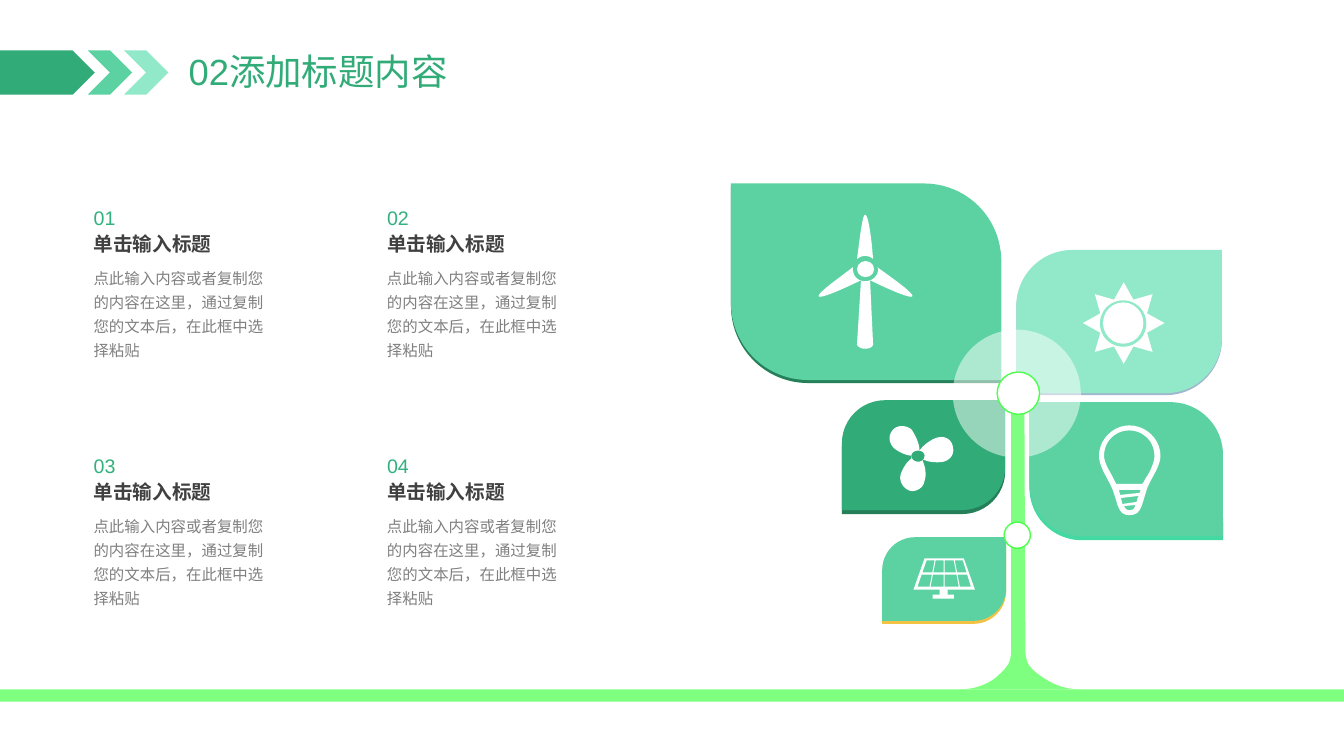
from dataclasses import dataclass
from itertools import product
from typing import Optional

from lxml.etree import SubElement
from pptx import Presentation
from pptx.dml.color import RGBColor
from pptx.enum.shapes import MSO_SHAPE as Preset
from pptx.enum.text import MSO_ANCHOR, MSO_AUTO_SIZE, PP_ALIGN
from pptx.oxml.ns import qn
from pptx.util import Emu, Inches, Pt

# The slide is a grid of one-inch cells: 13.33 columns by 7.5 rows.
CELL = Inches(1)
COLUMNS, ROWS = 13.33, 7.5
FONT = "Arial"
COLORS = {
    "paper": "FEFFFE", "deep": "31AB78", "mid": "5CD2A3", "pale": "91E9C9",
    "number": "31B17E", "heading": "404040", "body": "808080",
    "forest": "25805A", "mint": "42D9A2", "steel": "9FB8CD", "amber": "F2C245",
    "trunk": "7FFF7F", "ring": "4CFF4C",
}
HEADING = "单击输入标题"
BODY = "点此输入内容或者复制您的内容在这里，通过复制您的文本后，在此框中选择粘贴"


@dataclass(frozen=True)
class Box:
    left: float
    top: float
    width: float
    height: float

    def emu(self) -> list[Emu]:
        return [Emu(round(n * CELL)) for n in (self.left, self.top, self.width, self.height)]


@dataclass(frozen=True)
class Leaf:
    box: Box
    color: str
    edge: str
    drop: float
    rounded: tuple[float, float]


@dataclass(frozen=True)
class CardLine:
    text: str
    drop: float
    width: float
    height: float
    size: int
    color: str
    spacing: float = 1.2
    bold: bool = False


# Rounded corners: top left with bottom right, or top right with bottom left.
FALLING, RISING = (0.392, 0), (0, 0.392)
UPPER_LEAVES = [
    Leaf(Box(8.35, 3.97, 1.62, 1.09), "deep", "forest", 0.04, FALLING),
    Leaf(Box(10.21, 3.99, 1.92, 1.33), "mid", "mint", 0.04, RISING),
    Leaf(Box(10.08, 2.48, 2.04, 1.42), "pale", "steel", 0.02, FALLING),
    Leaf(Box(7.25, 1.82, 2.68, 1.95), "mid", "forest", 0.03, RISING),
]
LOW_LEAF = Leaf(Box(8.75, 5.33, 1.23, 0.83), "mid", "amber", 0.03, FALLING)

# An outline step is a line's end (2 numbers) or a cubic curve (6 numbers).
Contour = list[tuple[float, ...]]
TRUNK: list[Contour] = [[
    (10.16, 3.9), (10.17, 6.45), (10.17, 6.5, 10.18, 6.55, 10.2, 6.59),
    (10.21, 6.6, 10.22, 6.62, 10.23, 6.63), (10.27, 6.67, 10.32, 6.71, 10.39, 6.75),
    (10.49, 6.81, 10.6, 6.84, 10.72, 6.84), (9.51, 6.84),
    (9.65, 6.84, 9.78, 6.8, 9.88, 6.72), (9.91, 6.69, 9.95, 6.66, 9.97, 6.63),
    (9.98, 6.62, 9.99, 6.6, 10, 6.59), (10.02, 6.55, 10.03, 6.5, 10.03, 6.45), (10.03, 3.9),
]]
TOP_BLADE: list[Contour] = [[
    (8.66, 2.57), (8.65, 2.44, 8.62, 2.13, 8.58, 2.13), (8.55, 2.13, 8.52, 2.44, 8.5, 2.57),
    (8.53, 2.55, 8.55, 2.54, 8.58, 2.54), (8.61, 2.54, 8.64, 2.55, 8.66, 2.57),
]]
TURBINE: list[Contour] = [[
    (8.7, 2.65), (8.71, 2.66, 8.71, 2.66, 8.71, 2.67), (8.71, 2.74, 8.65, 2.79, 8.58, 2.79),
    (8.51, 2.79, 8.46, 2.74, 8.46, 2.67), (8.46, 2.66, 8.46, 2.66, 8.46, 2.65),
    (8.36, 2.73, 8.1, 2.91, 8.12, 2.94), (8.14, 2.97, 8.42, 2.84, 8.54, 2.78), (8.5, 3.42),
    (8.5, 3.42, 8.52, 3.46, 8.58, 3.46), (8.65, 3.46, 8.66, 3.42, 8.66, 3.42), (8.63, 2.78),
    (8.75, 2.84, 9.03, 2.97, 9.05, 2.94), (9.07, 2.91, 8.81, 2.73, 8.7, 2.65),
]]
FAN: list[Contour] = [
    [(9.45, 4.43), (9.44, 4.36, 9.37, 4.32, 9.3, 4.34), (9.25, 4.35, 9.16, 4.41, 9.12, 4.47),
     (9.12, 4.46), (9.12, 4.4, 9.07, 4.3, 9.04, 4.26), (8.99, 4.22, 8.91, 4.21, 8.86, 4.26),
     (8.81, 4.31, 8.81, 4.38, 8.86, 4.44), (8.89, 4.47, 8.98, 4.52, 9.04, 4.52),
     (9.04, 4.53, 9.04, 4.54, 9.04, 4.55), (8.99, 4.58, 8.94, 4.67, 8.93, 4.72),
     (8.92, 4.78, 8.96, 4.85, 9.03, 4.87), (9.09, 4.88, 9.16, 4.84, 9.17, 4.77),
     (9.19, 4.72, 9.18, 4.63, 9.15, 4.57), (9.15, 4.57, 9.16, 4.56, 9.16, 4.56),
     (9.22, 4.59, 9.31, 4.59, 9.36, 4.58), (9.43, 4.56, 9.47, 4.5, 9.45, 4.43)],
    [(9.11, 4.58), (9.07, 4.58, 9.04, 4.56, 9.04, 4.52), (9.04, 4.49, 9.07, 4.47, 9.11, 4.47),
     (9.14, 4.47, 9.17, 4.49, 9.17, 4.52), (9.17, 4.56, 9.14, 4.58, 9.11, 4.58)],
]
BULB: list[Contour] = [
    [(11.2, 4.22), (11.04, 4.22, 10.9, 4.36, 10.9, 4.52), (10.9, 4.64, 11, 4.76, 11.04, 4.87),
     (11.09, 5.01, 11.09, 5.11, 11.2, 5.11), (11.32, 5.11, 11.32, 5.02, 11.37, 4.87),
     (11.4, 4.76, 11.51, 4.64, 11.51, 4.52), (11.51, 4.36, 11.37, 4.22, 11.2, 4.22)],
    [(11.27, 4.98), (11.13, 5), (11.13, 4.98, 11.12, 4.96, 11.12, 4.94), (11.29, 4.92),
     (11.29, 4.93, 11.29, 4.94, 11.28, 4.94), (11.28, 4.95, 11.28, 4.97, 11.27, 4.98)],
    [(11.11, 4.91), (11.11, 4.9, 11.1, 4.88, 11.1, 4.86), (11.31, 4.86),
     (11.31, 4.87, 11.31, 4.88, 11.3, 4.89)],
    [(11.2, 5.06), (11.18, 5.06, 11.16, 5.05, 11.15, 5.02), (11.26, 5.01),
     (11.25, 5.05, 11.24, 5.06, 11.2, 5.06)],
    [(11.33, 4.8), (11.07, 4.8), (11.06, 4.78, 11.04, 4.74, 11.03, 4.72),
     (10.99, 4.65, 10.95, 4.58, 10.95, 4.52), (10.95, 4.38, 11.06, 4.27, 11.2, 4.27),
     (11.34, 4.27, 11.45, 4.38, 11.45, 4.52), (11.45, 4.58, 11.42, 4.65, 11.38, 4.72),
     (11.36, 4.74, 11.35, 4.78, 11.33, 4.8)],
]


def solar_panel() -> list[Contour]:
    """Frame and foot, with two rows of four slanted cells cut out."""
    frame = [(9.4, 5.85), (9.67, 5.85), (9.56, 5.54), (9.17, 5.54), (9.06, 5.85), (9.32, 5.85),
             (9.32, 5.9), (9.25, 5.9), (9.25, 5.94), (9.46, 5.94), (9.46, 5.9), (9.4, 5.9)]
    far = [(9.19, 9.27), (9.28, 9.36), (9.37, 9.46), (9.47, 9.55)]
    near = [(9.1, 9.22), (9.23, 9.36), (9.37, 9.51), (9.52, 9.63)]

    def corner(column: int, side: int, y: float) -> tuple[float, float]:
        start, end = far[column][side], near[column][side]
        return start + (end - start) * (y - 5.56) / 0.26, y

    cells = [[corner(column, side, y)
              for side, y in ((0, top), (1, top), (1, top + 0.12), (0, top + 0.12))]
             for top, column in product((5.56, 5.7), range(4))]
    return [frame, *cells]


def rgb(color: str) -> RGBColor:
    return RGBColor.from_string(COLORS[color])


def paint(shape, color: str, ring: Optional[str] = None, opacity: int = 100) -> None:
    shape.shadow.inherit = False
    shape.fill.solid()
    shape.fill.fore_color.rgb = rgb(color)
    if opacity < 100:
        tint = shape.fill._xPr.find(qn("a:solidFill"))[0]
        SubElement(tint, qn("a:alpha"), val=str(opacity * 1000))
    if ring:
        shape.line.color.rgb = rgb(ring)
        shape.line.width = Pt(1)
    else:
        shape.line.fill.background()


def add_preset(slide, preset: Preset, box: Box, color: str,
               adjust: tuple[float, ...] = (), **look) -> None:
    shape = slide.shapes.add_shape(preset, *box.emu())
    for index, value in enumerate(adjust):
        shape.adjustments[index] = value
    paint(shape, color, **look)


def add_leaf(slide, leaf: Leaf) -> None:
    box = leaf.box
    for drop, color in ((leaf.drop, leaf.edge), (0, leaf.color)):
        add_preset(slide, Preset.ROUND_2_DIAG_RECTANGLE,
                   Box(box.left, box.top + drop, box.width, box.height), color, leaf.rounded)


def flatten(contour: Contour, pieces: int = 10) -> list[tuple[int, int]]:
    """Turn the steps of an outline into points in EMU."""
    points = [contour[0]]
    for step in contour[1:]:
        if len(step) == 2:
            points.append(step)
            continue
        knots = [points[-1], step[:2], step[2:4], step[4:]]
        for t in (n / pieces for n in range(1, pieces + 1)):
            weights = ((1 - t) ** 3, 3 * t * (1 - t) ** 2, 3 * t * t * (1 - t), t ** 3)
            points.append(tuple(sum(w * k[axis] for w, k in zip(weights, knots))
                                for axis in (0, 1)))
    return [(round(x * CELL), round(y * CELL)) for x, y in points]


def add_outline(slide, contours: list[Contour], color: str = "paper") -> None:
    first, *holes = [flatten(contour) for contour in contours]
    builder = slide.shapes.build_freeform(*first[0], scale=1.0)
    builder.add_line_segments(first[1:], close=True)
    for hole in holes:
        builder.move_to(*hole[0])
        builder.add_line_segments(hole[1:], close=True)
    paint(builder.convert_to_shape(), color)


def write(holder, text: str, *, size: int, color: str, bold: bool = False,
          spacing: float = 1.0, fit=MSO_AUTO_SIZE.SHAPE_TO_FIT_TEXT) -> None:
    frame = holder.text_frame
    frame.word_wrap = True
    frame.auto_size = fit
    frame.vertical_anchor = MSO_ANCHOR.TOP
    paragraph = frame.paragraphs[0]
    paragraph.alignment = PP_ALIGN.LEFT
    paragraph.line_spacing = spacing
    run = paragraph.add_run()
    run.text = text
    run.font.name, run.font.size, run.font.bold = FONT, Pt(size), bold
    run.font.color.rgb = rgb(color)


def add_card(slide, number: int, left: float, top: float) -> None:
    for line in (
        CardLine(f"{number:02}", 0, 1.62, 0.37, 14, "number"),
        CardLine(HEADING, 0.26, 1.62, 0.37, 14, "heading", bold=True),
        CardLine(BODY, 0.62, 1.93, 1.04, 11, "body", spacing=1.3),
    ):
        box = Box(left, top + line.drop, line.width, line.height)
        write(slide.shapes.add_textbox(*box.emu()), line.text, size=line.size,
              color=line.color, bold=line.bold, spacing=line.spacing)


def add_tree(slide) -> None:
    for leaf in UPPER_LEAVES:
        add_leaf(slide, leaf)
    add_preset(slide, Preset.OVAL, Box(9.45, 3.27, 1.27, 1.27), "paper", opacity=50)
    add_outline(slide, TRUNK, "trunk")
    add_preset(slide, Preset.OVAL, Box(9.89, 3.69, 0.42, 0.42), "paper", ring="ring")
    add_preset(slide, Preset.RECTANGLE, Box(0, 6.84, COLUMNS, 0.12), "trunk")
    add_leaf(slide, LOW_LEAF)
    add_preset(slide, Preset.OVAL, Box(8.5, 2.59, 0.17, 0.16), "paper")
    add_preset(slide, Preset.STAR_8_POINT, Box(10.74, 2.8, 0.81, 0.81), "paper", (0.31,))
    add_preset(slide, Preset.OVAL, Box(10.91, 2.98, 0.46, 0.46), "pale")
    add_preset(slide, Preset.OVAL, Box(10.94, 3, 0.4, 0.41), "paper")
    for icon in (TOP_BLADE, TURBINE, FAN, BULB, solar_panel()):
        add_outline(slide, icon)
    add_preset(slide, Preset.OVAL, Box(9.96, 5.18, 0.26, 0.26), "paper", ring="ring")


def main() -> None:
    deck = Presentation()
    deck.slide_width, deck.slide_height = Inches(COLUMNS), Inches(ROWS)
    slide = deck.slides.add_slide(deck.slide_layouts.get_by_name("Title Only"))
    slide.background.fill.solid()
    slide.background.fill.fore_color.rgb = rgb("paper")

    title = slide.shapes.title
    title.left, title.top, title.width, title.height = Box(1.77, 0.44, 2.82, 0.54).emu()
    write(title, "02添加标题内容", size=26, color="deep", fit=MSO_AUTO_SIZE.NONE)
    add_preset(slide, Preset.PENTAGON, Box(0, 0.5, 0.94, 0.44), "deep")
    for left, color in ((0.87, "mid"), (1.23, "pale")):
        add_preset(slide, Preset.CHEVRON, Box(left, 0.5, 0.44, 0.44), color)

    add_tree(slide)
    for index, (row, column) in enumerate(product(range(2), repeat=2)):
        add_card(slide, index + 1, 0.83 + 2.91 * column, 1.95 + 2.46 * row)
    deck.save("out.pptx")


if __name__ == "__main__":
    main()
